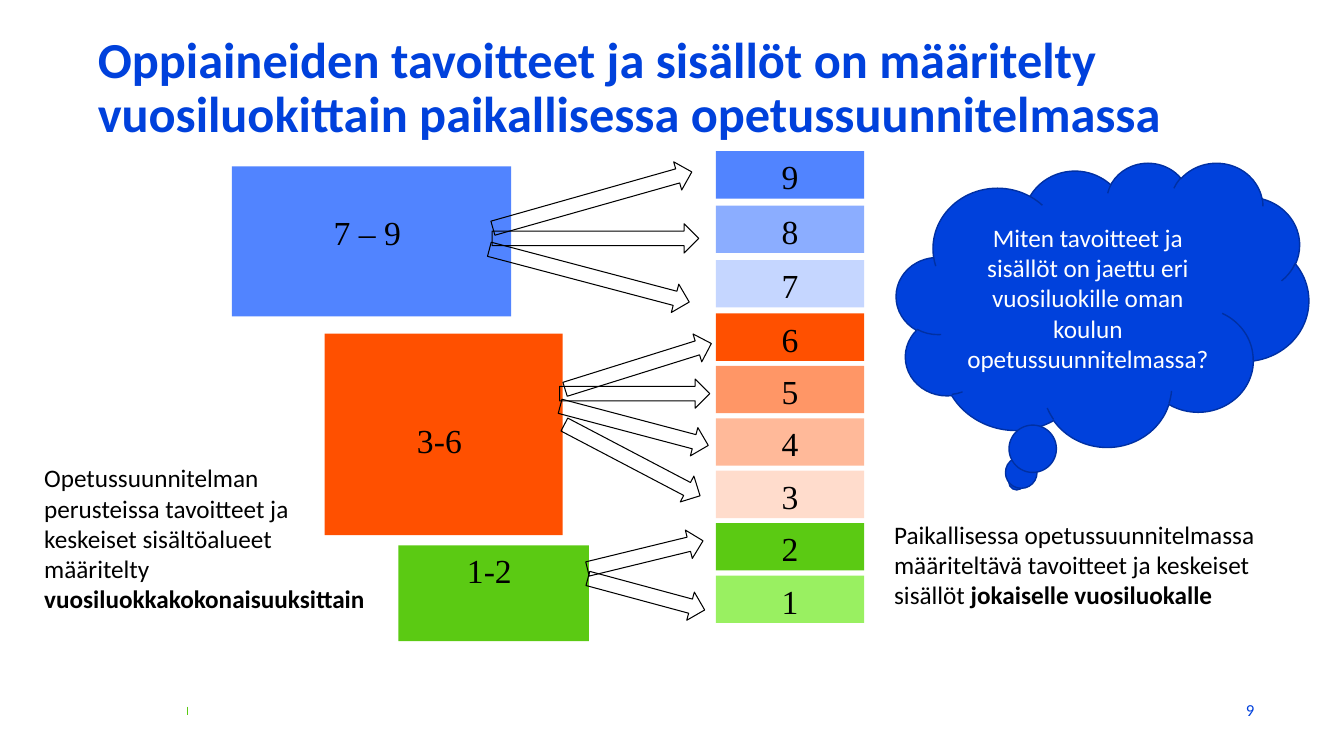
"""Build the slide on subject goals by school year."""
import pptx
import pptx.dml.color
import pptx.enum.shapes
import pptx.enum.text
import pptx.oxml
import pptx.oxml.ns
import pptx.util

Inches = pptx.util.Inches
Pt = pptx.util.Pt
SHAPE = pptx.enum.shapes.MSO_SHAPE
ALIGN = pptx.enum.text.PP_ALIGN
ANCHOR = pptx.enum.text.MSO_ANCHOR

COLORS = {
    "blue": "0041DC", "blue_edge": "0030A3", "green": "5BCA13", "black": "000000", "white": "FFFFFF",
    "upper": "5184FF", "upper_mid": "8BADFF", "upper_light": "C5D6FF",
    "middle": "FF5000", "middle_mid": "FF9666", "middle_soft": "FFB999", "middle_light": "FFDCCC",
    "lower_light": "99F061",
}
GRADES = [
    ("9", 1.5, "upper"), ("8", 2.04, "upper_mid"), ("7", 2.58, "upper_light"),
    ("6", 3.11, "middle"), ("5", 3.63, "middle_mid"), ("4", 4.15, "middle_soft"),
    ("3", 4.67, "middle_light"), ("2", 5.19, "green"), ("1", 5.71, "lower_light"),
]
STAGES = [
    ("7 – 9 ", (2.3, 1.65, 2.77, 1.49), "upper", 0.45),
    ("1-2 ", (3.95, 5.41, 1.89, 0.95), "green", 0.05),
    ("3-6 ", (3.22, 3.31, 2.36, 2), "middle", 0.86),
]
ARROWS = [
    (4.85, 1.84, 2.05, 344.2), (4.82, 2.59, 2.05, 14.8), (4.88, 2.22, 2.05, 0),
    (5.55, 3.76, 1.49, 0), (5.57, 3.49, 1.52, 342.6), (5.53, 4.08, 1.52, 14.8),
    (5.51, 4.42, 1.52, 27.7), (5.81, 5.36, 1.18, 346.3), (5.81, 5.75, 1.2, 15.1),
]


def rgb(name):
    """Return the named colour."""
    return pptx.dml.color.RGBColor.from_string(COLORS[name])


def write(frame, text, bold_end="", size=18, font="Calibri", color="black", bold=False,
          align=ALIGN.LEFT, anchor=ANCHOR.TOP, spacing=None):
    """Write one formatted paragraph, with an optional bold ending."""
    frame.word_wrap = True
    frame.vertical_anchor = anchor
    paragraph = frame.paragraphs[0]
    paragraph.alignment = align
    paragraph.line_spacing = spacing
    for words, heavy in ((text, bold), (bold_end, True)):
        if words:
            run = paragraph.add_run()
            run.text = words
            run.font.name = font
            run.font.size = Pt(size)
            run.font.bold = heavy
            run.font.color.rgb = rgb(color)


class SlideBuilder:
    """Hold the slide and the style of its elements."""

    def __init__(self, slide):
        """Keep the slide and its label style."""
        self.slide = slide
        self.label = {"size": 24, "font": "Times New Roman", "align": ALIGN.CENTER}

    def title(self, text, box):
        """Place and format the title."""
        shape = self.slide.shapes.title
        shape.left, shape.top, shape.width, shape.height = map(Inches, box)
        shape.text_frame.auto_size = pptx.enum.text.MSO_AUTO_SIZE.NONE
        write(shape.text_frame, text, size=36, color="blue", bold=True,
              anchor=ANCHOR.MIDDLE, spacing=0.9)

    def shape(self, kind, box, fill=None, line=None, line_width=0.75):
        """Add a preset shape without shadow."""
        shape = self.slide.shapes.add_shape(kind, *map(Inches, box))
        shape.shadow.inherit = False
        if fill:
            shape.fill.solid()
            shape.fill.fore_color.rgb = rgb(fill)
        else:
            shape.fill.background()
        if line:
            shape.line.color.rgb = rgb(line)
            shape.line.width = Pt(line_width)
        else:
            shape.line.fill.background()
        return shape

    def block(self, text, box, fill, top_margin=0.05):
        """Add a coloured rectangle with its label."""
        frame = self.shape(SHAPE.RECTANGLE, box, fill).text_frame
        frame.margin_top = Inches(top_margin)
        write(frame, text, **self.label)

    def arrow(self, left, top, width, rotation):
        """Add an outlined arrow."""
        box = (left, top, width, 0.29)
        self.shape(SHAPE.RIGHT_ARROW, box, line="black").rotation = rotation

    def cloud(self, text, box):
        """Add the thought cloud."""
        shape = self.shape(SHAPE.CLOUD_CALLOUT, box, "blue", "blue_edge", 1)
        write(shape.text_frame, text, color="white", align=ALIGN.CENTER, anchor=ANCHOR.MIDDLE)

    def text(self, text, box, margin=None, **style):
        """Add a text box."""
        frame = self.slide.shapes.add_textbox(*map(Inches, box)).text_frame
        if margin is not None:
            frame.margin_left = frame.margin_right = Inches(margin)
            frame.margin_top = frame.margin_bottom = Inches(margin)
        write(frame, text, **style)

    def line(self, start, end, color, width):
        """Add a straight line without shadow."""
        connector = self.slide.shapes.add_connector(
            pptx.enum.shapes.MSO_CONNECTOR.STRAIGHT, *map(Inches, start + end))
        connector.line.color.rgb = rgb(color)
        connector.line.width = Pt(width)
        properties = connector.element.find(pptx.oxml.ns.qn("p:spPr"))
        properties.append(pptx.oxml.parse_xml(
            f'<a:effectLst {pptx.oxml.ns.nsdecls("a")}/>'))


def main():
    """Build and save the presentation."""
    presentation = pptx.Presentation()
    presentation.slide_width = Inches(13.33)
    presentation.slide_height = Inches(7.5)
    builder = SlideBuilder(presentation.slides.add_slide(presentation.slide_layouts[5]))

    builder.line((1.86, 7.01), (1.86, 7.09), "green", 1.25)
    builder.title("Oppiaineiden tavoitteet ja sisällöt on määritelty vuosiluokittain "
                  "paikallisessa opetussuunnitelmassa", (0.87, 0.3, 12.47, 1.17))
    for text, box, fill, top_margin in STAGES:
        builder.block(text, box, fill, top_margin)
    for text, top, fill in GRADES:
        builder.block(text, (7.1, top, 1.47, 0.47), fill)
    for arrow in ARROWS:
        builder.arrow(*arrow)
    builder.text("Opetussuunnitelman perusteissa tavoitteet ja keskeiset sisältöalueet määritelty ",
                 (0.34, 4.54, 3.45, 1.62), bold_end="vuosiluokkakokonaisuuksittain")
    builder.text("Paikallisessa opetussuunnitelmassa määriteltävä tavoitteet ja keskeiset sisällöt ",
                 (8.77, 5.1, 4.33, 1.01), bold_end="jokaiselle vuosiluokalle")
    builder.cloud("Miten tavoitteet ja sisällöt on jaettu eri vuosiluokille oman koulun "
                  "opetussuunnitelmassa?", (8.89, 1.61, 4.09, 2.82))
    builder.text("9", (11.54, 6.9, 0.9, 0.29), margin=0, size=12, color="blue",
                 align=ALIGN.RIGHT, anchor=ANCHOR.MIDDLE)
    presentation.save("out.pptx")


if __name__ == "__main__":
    main()
